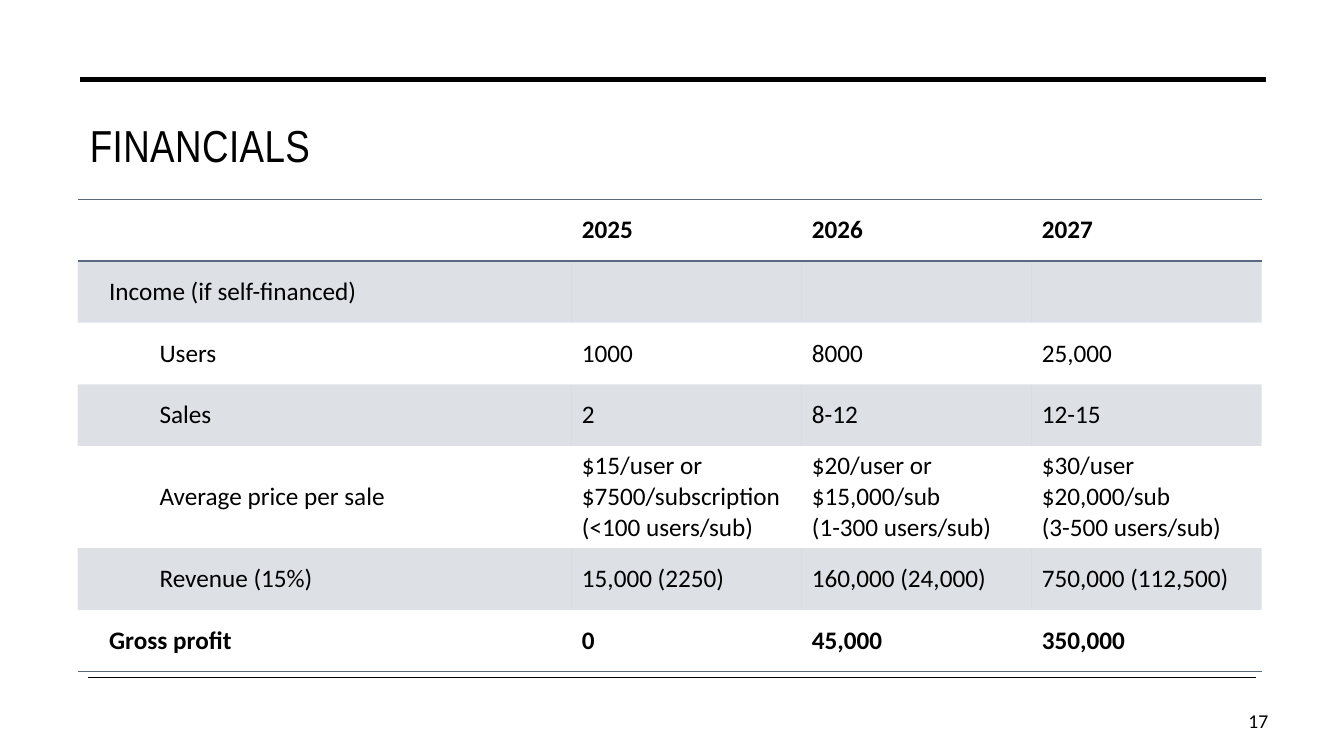
from pptx import Presentation
from pptx.dml.color import RGBColor
from pptx.enum.shapes import MSO_CONNECTOR
from pptx.enum.text import MSO_ANCHOR, MSO_AUTO_SIZE, PP_ALIGN
from pptx.oxml.ns import qn
from pptx.util import Pt
from lxml.etree import SubElement

BLACK = RGBColor(0x00, 0x00, 0x00)
SLATE = RGBColor(0x59, 0x67, 0x81)
PLAIN_TABLE_STYLE = "{2D5ABB26-0587-4C30-8999-92F81FD0307C}"

YEARS = ["", "2025", "2026", "2027"]
# Indent level, then the texts of each row
FINANCIALS = [
    (0, ["Income (if self-financed)", "", "", ""]),
    (1, ["Users", "1000", "8000", "25,000"]),
    (1, ["Sales", "2", "8-12", "12-15"]),
    (1, ["Average price per sale",
         "$15/user or\n$7500/subscription\n(<100 users/sub)",
         "$20/user or\n$15,000/sub\n(1-300 users/sub)",
         "$30/user\n$20,000/sub\n(3-500 users/sub)"]),
    (1, ["Revenue (15%)", "15,000 (2250)", "160,000 (24,000)", "750,000 (112,500)"]),
    (0, ["Gross profit", "0", "45,000", "350,000"]),
]


class FinancialsSlide:
    heading_font = "Arial Narrow"
    body_font = "Calibri"

    def __init__(self, deck):
        self.slide = deck.slides.add_slide(deck.slide_layouts[5])

    def run(self, paragraph, text, size, font=None, bold=False):
        run = paragraph.add_run()
        run.text = text
        run.font.name = font or self.body_font
        run.font.size = Pt(size)
        run.font.bold = bold
        run.font.color.rgb = BLACK
        return run

    def rule(self, left, right, y, weight):
        rule = self.slide.shapes.add_connector(
            MSO_CONNECTOR.STRAIGHT, Pt(left), Pt(y), Pt(right), Pt(y))
        rule.line.color.rgb = BLACK
        rule.line.width = Pt(weight)
        SubElement(rule._element.spPr, qn("a:effectLst"))

    def title(self, text, left, top, width, height):
        title = self.slide.shapes.title
        title.left, title.top = Pt(left), Pt(top)
        title.width, title.height = Pt(width), Pt(height)
        frame = title.text_frame
        frame.auto_size = MSO_AUTO_SIZE.NONE
        frame.vertical_anchor = MSO_ANCHOR.TOP
        frame.margin_top = Pt(6)
        heading = frame.paragraphs[0]
        heading.alignment = PP_ALIGN.LEFT
        run = self.run(heading, text, 32, self.heading_font)
        run.font._element.set("spc", "30")

    def page_number(self, text, left, top, width, height):
        box = self.slide.shapes.add_textbox(Pt(left), Pt(top), Pt(width), Pt(height))
        frame = box.text_frame
        frame.word_wrap = True
        frame.vertical_anchor = MSO_ANCHOR.MIDDLE
        frame.paragraphs[0].alignment = PP_ALIGN.RIGHT
        self.run(frame.paragraphs[0], text, 14)

    def cell(self, cell, text, level=0, bold=False, edges=(), shaded=False):
        cell.vertical_anchor = MSO_ANCHOR.MIDDLE
        frame = cell.text_frame
        for index, line in enumerate(text.split("\n") if text else []):
            paragraph = frame.add_paragraph() if index else frame.paragraphs[0]
            if level:
                paragraph.level = level
                paragraph._p.get_or_add_pPr().set("marL", str(Pt(36 * level)))
            self.run(paragraph, line, 18, bold=bold)

        # Borders come before the fill in the cell properties
        properties = cell._tc.get_or_add_tcPr()
        for edge in edges:
            border = SubElement(properties, qn(f"a:{edge}"), w=str(Pt(1)))
            paint = SubElement(border, qn("a:solidFill"))
            SubElement(paint, qn("a:srgbClr"), val=str(SLATE))
        if shaded:
            cell.fill.solid()
            cell.fill.fore_color.rgb = SLATE
            tint = properties.find(qn("a:solidFill")).find(qn("a:srgbClr"))
            SubElement(tint, qn("a:alpha"), val="20000")
        else:
            cell.fill.background()

    def table(self, header, rows, left, top, widths, row_height):
        table = self.slide.shapes.add_table(
            len(rows) + 1, len(widths), Pt(left), Pt(top),
            Pt(sum(widths)), Pt(row_height * (len(rows) + 1))).table
        table._tbl.tblPr.find(qn("a:tableStyleId")).text = PLAIN_TABLE_STYLE
        for column, width in zip(table.columns, widths):
            column.width = Pt(width)
        for column, year in enumerate(header):
            self.cell(table.cell(0, column), year, bold=True, edges=("lnT", "lnB"))
        for number, (level, texts) in enumerate(rows, start=1):
            is_total = number == len(rows)
            for column, text in enumerate(texts):
                cell = table.cell(number, column)
                if column == 0:
                    cell.margin_left = Pt(22.5)
                self.cell(cell, text, 0 if column else level, bold=is_total,
                          edges=("lnB",) if is_total else (), shaded=number % 2 == 1)


def main():
    deck = Presentation()
    deck.slide_width, deck.slide_height = Pt(960), Pt(540)
    page = FinancialsSlide(deck)

    # Frame rules
    page.rule(57, 904.5, 56.75, 3.5)
    page.rule(63, 897, 483.75, 1)

    # Title, figures and page number
    page.title("FINANCIALS", 57, 78, 849.5, 83)
    page.table(YEARS, FINANCIALS, 55.5, 142.5, [353, 164.25, 164.25, 164.25], 44)
    page.page_number("17", 859.5, 500.5, 53.5, 29)

    deck.save("out.pptx")


if __name__ == "__main__":
    main()
